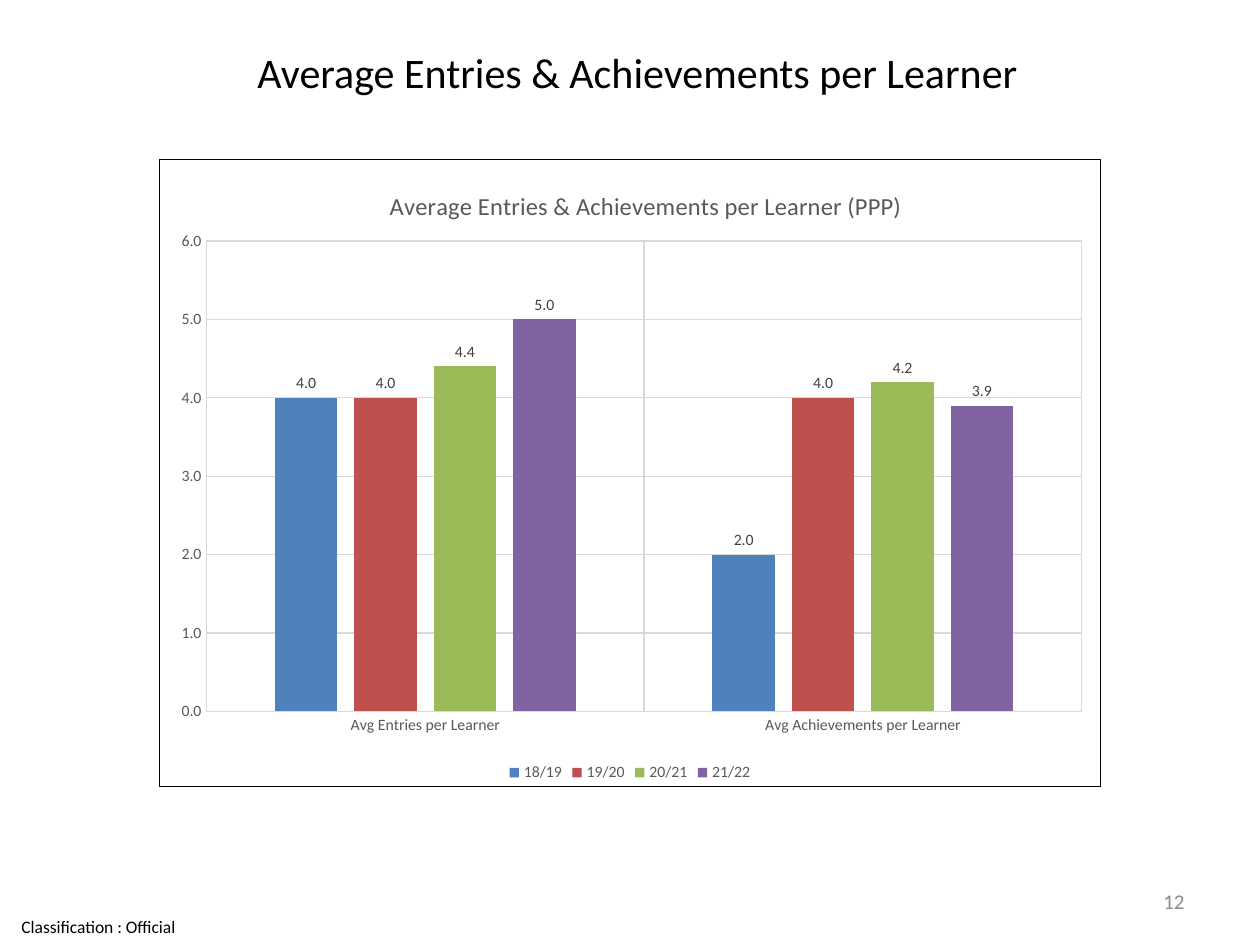
import pptx
import pptx.chart.data
import pptx.dml.color
import pptx.enum.chart
import pptx.enum.text
import pptx.oxml
import pptx.oxml.ns
import pptx.util

Inches = pptx.util.Inches
Pt = pptx.util.Pt
qn = pptx.oxml.ns.qn
ALIGN = pptx.enum.text.PP_ALIGN
FONT = "Calibri"
GREY = "595959"
GRID = "D9D9D9"
CATEGORIES = ["Avg Entries per Learner", "Avg Achievements per Learner"]
SERIES = [
    ("18/19", (4.0, 2.0), "4F81BD"),
    ("19/20", (4.0, 4.0), "C0504D"),
    ("20/21", (4.4, 4.2), "9BBB59"),
    ("21/22", (5.0, 3.9), "8064A2"),
]


def rgb(value):
    return pptx.dml.color.RGBColor.from_string(value)


def style_font(font, size, color):
    font.name = FONT
    font.size = Pt(size)
    font.bold = False
    font.color.rgb = rgb(color)


def style_line(line, color):
    line.color.rgb = rgb(color)
    line.width = Pt(0.75)


def write(tf, text, size, color, align):
    tf.word_wrap = True
    tf.vertical_anchor = pptx.enum.text.MSO_ANCHOR.MIDDLE
    p = tf.paragraphs[0]
    p.alignment = align
    r = p.add_run()
    r.text = text
    style_font(r.font, size, color)


def set_layout(parent, index, **values):
    for old in parent.findall(qn("c:layout")):
        parent.remove(old)
    target = '<c:layoutTarget val="inner"/>' if "w" in values else ""
    modes = "".join(f'<c:{k}Mode val="edge"/>' for k in "xy")
    sizes = "".join(f'<c:{k} val="{v}"/>' for k, v in values.items())
    parent.insert(index, pptx.oxml.parse_xml(
        f'<c:layout {pptx.oxml.ns.nsdecls("c")}><c:manualLayout>'
        f"{target}{modes}{sizes}</c:manualLayout></c:layout>"))


def set_border(chart, color):
    chart.element.find(qn("c:chart")).addnext(pptx.oxml.parse_xml(
        f'<c:spPr {pptx.oxml.ns.nsdecls("c", "a")}><a:noFill/>'
        f'<a:ln w="{Pt(0.75)}"><a:solidFill><a:srgbClr val="{color}"/>'
        "</a:solidFill></a:ln></c:spPr>"))


def add_title(s, left, top, width, height):
    sp = s.shapes.title
    sp.left, sp.top, sp.width, sp.height = left, top, width, height
    write(sp.text_frame, "Average Entries & Achievements per Learner",
          24, "000000", ALIGN.CENTER)


def style_axis(axis):
    axis.major_tick_mark = pptx.enum.chart.XL_TICK_MARK.NONE
    axis.minor_tick_mark = pptx.enum.chart.XL_TICK_MARK.NONE
    axis.has_major_gridlines = True
    style_line(axis.major_gridlines.format.line, GRID)
    style_font(axis.tick_labels.font, 9, GREY)


def add_learner_chart(s, left, top, width, height):
    data = pptx.chart.data.CategoryChartData(number_format="0.0")
    data.categories = CATEGORIES
    for name, values, _ in SERIES:
        data.add_series(name, values)
    chart = s.shapes.add_chart(
        pptx.enum.chart.XL_CHART_TYPE.COLUMN_CLUSTERED,
        left, top, width, height, data).chart
    style_font(chart.font, 10, "000000")
    set_border(chart, "000000")

    chart.has_title = True
    title = chart.chart_title
    r = title.text_frame.paragraphs[0].add_run()
    r.text = "Average Entries & Achievements per Learner (PPP)"
    style_font(r.font, 14, GREY)
    set_layout(title.element, 1, x=0.24, y=0.04)
    set_layout(chart.element.find(".//" + qn("c:plotArea")), 0,
               x=0.05, y=0.13, w=0.93, h=0.75)

    chart.has_legend = True
    chart.legend.position = pptx.enum.chart.XL_LEGEND_POSITION.BOTTOM
    chart.legend.include_in_layout = False
    style_font(chart.legend.font, 9, GREY)

    style_axis(chart.category_axis)
    style_line(chart.category_axis.format.line, GRID)
    axis = chart.value_axis
    style_axis(axis)
    axis.format.line.fill.background()
    axis.minimum_scale, axis.maximum_scale, axis.major_unit = 0, 6, 1
    axis.tick_labels.number_format = "0.0"
    axis.tick_labels.number_format_is_linked = False

    plot = chart.plots[0]
    plot.vary_by_categories = False
    plot.gap_width = 219
    plot.overlap = -27
    for series, (_, _, color) in zip(plot.series, SERIES):
        series.format.fill.solid()
        series.format.fill.fore_color.rgb = rgb(color)
        labels = series.data_labels
        labels.show_value = True
        labels.position = pptx.enum.chart.XL_LABEL_POSITION.OUTSIDE_END
        labels.number_format = "0.0"
        labels.number_format_is_linked = False
        style_font(labels.font, 9, "404040")


def add_classification(s, left, top, width, height):
    tf = s.shapes.add_textbox(left, top, width, height).text_frame
    tf.margin_left = Inches(0.17)
    tf.margin_right = tf.margin_top = tf.margin_bottom = 0
    write(tf, "Classification : Official", 10, "000000", ALIGN.LEFT)


def add_page_number(s, left, top, width, height):
    tf = s.shapes.add_textbox(left, top, width, height).text_frame
    write(tf, "12", 12, "8C8C8C", ALIGN.RIGHT)


def main():
    prs = pptx.Presentation()
    prs.slide_width, prs.slide_height = Inches(10), Inches(7.5)
    s = prs.slides.add_slide(prs.slide_layouts[5])
    regions = [
        (add_classification, (0, 7.21, 1.56, 0.29)),
        (add_title, (0.76, 0.29, 8.6, 0.55)),
        (add_page_number, (7.17, 6.95, 2.33, 0.4)),
        (add_learner_chart, (1.26, 1.26, 7.48, 4.99)),
    ]
    for add_region, box in regions:
        add_region(s, *map(Inches, box))
    prs.save("out.pptx")


if __name__ == "__main__":
    main()
